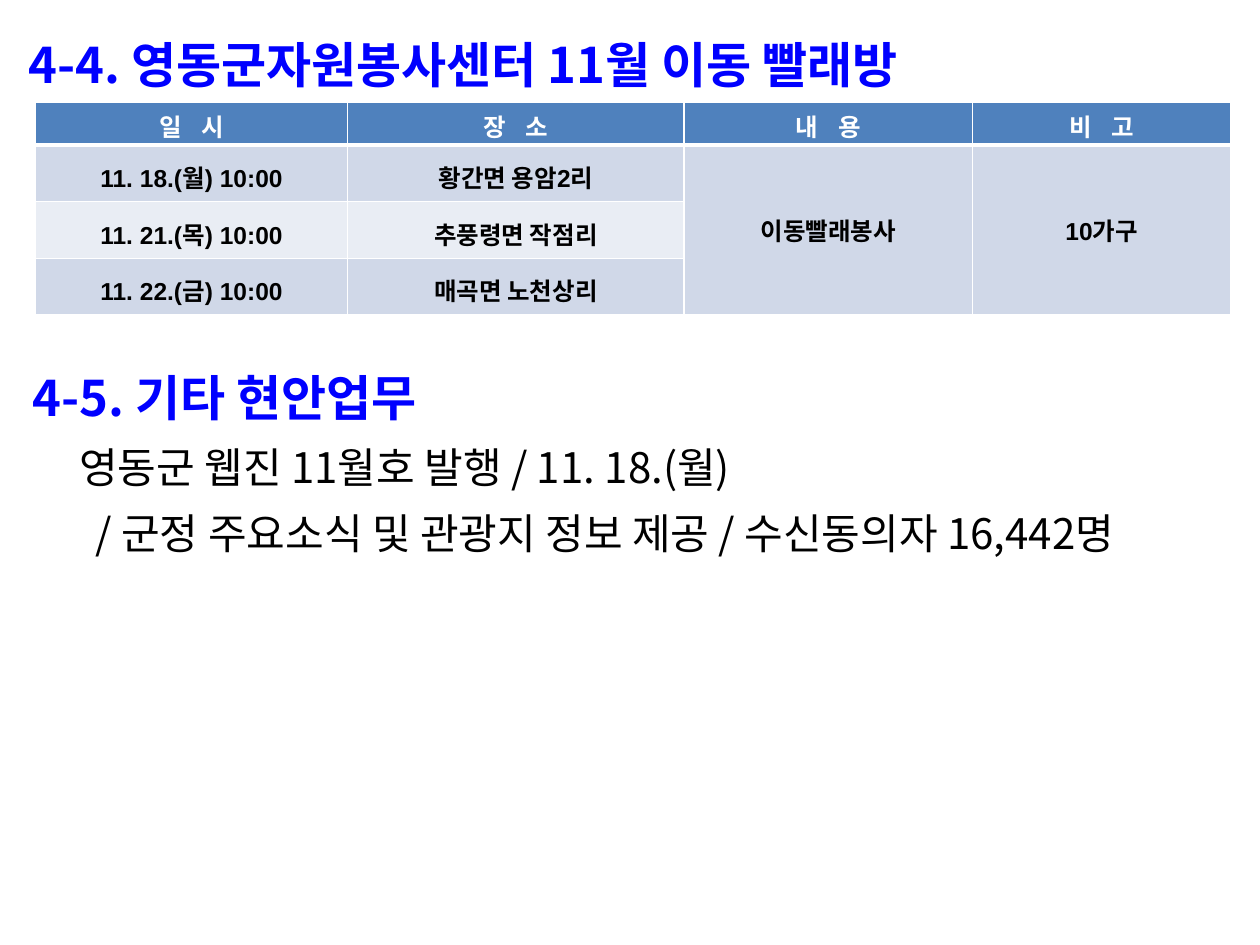
"""Builds the slide on the November mobile laundry visits and other current work."""
from lxml.etree import SubElement as Sub
from pptx import Presentation
from pptx.dml.color import RGBColor as RGB
from pptx.enum.text import MSO_ANCHOR as Anchor, PP_ALIGN as Align
from pptx.oxml.ns import qn
from pptx.util import Inches, Pt

BLUE, BLACK, WHITE = RGB(0, 0, 255), RGB(0, 0, 0), RGB(255, 255, 255)
HEAD, ODD, EVEN = RGB(0x4F, 0x81, 0xBD), RGB(0xD0, 0xD8, 0xE8), RGB(0xE9, 0xED, 0xF4)
SANS, ARIAL = "Noto Sans CJK KR", "Arial"

TITLE = "4-4. 영동군자원봉사센터 11월 이동 빨래방"
TOPIC = "4-5. 기타 현안업무"
NEWS = "영동군 웹진 11월호 발행 / 11. 18.(월)"
MORE = "/ 군정 주요소식 및 관광지 정보 제공 / 수신동의자 16,442명"

ROWS = [
    ("일 시", "장 소", "내 용", "비 고"),
    ("11. 18.(월) 10:00", "황간면 용암2리", "이동빨래봉사", "10가구"),
    ("11. 21.(목) 10:00", "추풍령면 작점리"),
    ("11. 22.(금) 10:00", "매곡면 노천상리"),
]
WIDTHS = (2.48, 2.67, 2.29, 2.05)
HEIGHTS = (0.34, 0.45, 0.45, 0.45)
MERGED = (2, 3)


def style(para, size, name, color, bold, space=1.0, align=None):
    para.line_spacing, para.alignment = space, align
    font = para.font
    font.size, font.name, font.bold = Pt(size), name, bold
    font.color.rgb = color


def add_text(slide, box, lines, space, wrap):
    frame = slide.shapes.add_textbox(*map(Inches, box)).text_frame
    frame.word_wrap = wrap
    for i, (text, size, color, bold, indent, align) in enumerate(lines):
        para = frame.add_paragraph() if i else frame.paragraphs[0]
        para.text = text
        props = para._p.get_or_add_pPr()
        props.set("marL", str(Inches(indent)))
        props.set("indent", "0")
        style(para, size, SANS, color, bold, space, align)


def edge(cell, head):
    props = cell._tc.get_or_add_tcPr()
    for side in "LRTB":
        width = 3 if head and side == "B" else 1
        line = Sub(props, qn(f"a:ln{side}"), w=str(Pt(width)))
        Sub(Sub(line, qn("a:solidFill")), qn("a:srgbClr"), val=str(WHITE))


def add_grid(slide, left, top):
    size = Inches(sum(WIDTHS)), Inches(sum(HEIGHTS))
    grid = slide.shapes.add_table(
        len(ROWS), len(WIDTHS), Inches(left), Inches(top), *size).table
    for col, width in zip(grid.columns, WIDTHS):
        col.width = Inches(width)
    for row, height in zip(grid.rows, HEIGHTS):
        row.height = Inches(height)
    for c in MERGED:
        grid.cell(1, c).merge(grid.cell(len(ROWS) - 1, c))
    for r in range(len(ROWS)):
        for c in range(len(WIDTHS)):
            cell, head = grid.cell(r, c), r == 0
            edge(cell, head)
            cell.fill.solid()
            plain = c in MERGED or r % 2
            cell.fill.fore_color.rgb = HEAD if head else ODD if plain else EVEN
            cell.vertical_anchor = Anchor.MIDDLE
            if c >= len(ROWS[r]):
                continue
            tight = not head and c not in MERGED
            if tight:
                cell.margin_left = cell.margin_right = Inches(0.07)
                cell.margin_top = cell.margin_bottom = Inches(0.02)
            para = cell.text_frame.paragraphs[0]
            run = para.add_run()
            run.text = ROWS[r][c]
            if head:
                run._r.get_or_add_rPr().set("spc", "400")
            style(para, 14, ARIAL, WHITE if head else BLACK, True,
                  1.2 if tight else 1.0, Align.CENTER)


def main():
    deck = Presentation()
    deck.slide_width, deck.slide_height = Inches(10), Inches(7.5)
    slide = deck.slides.add_slide(deck.slide_layouts[6])
    add_text(slide, (0.04, -0.01, 10, 2.66),
             [(TITLE, 28, BLUE, True, 0.09, Align.LEFT)], 1.5, False)
    add_grid(slide, 0.28, 0.81)
    add_text(slide, (0.16, 2.73, 9.84, 1.85), [
        (TOPIC, 28, BLUE, True, 0, Align.JUSTIFY),
        (NEWS, 24, BLACK, False, 0.37, Align.JUSTIFY),
        (MORE, 24, BLACK, False, 0.5, Align.LEFT),
    ], 1.3, True)
    deck.save("out.pptx")


if __name__ == "__main__":
    main()
